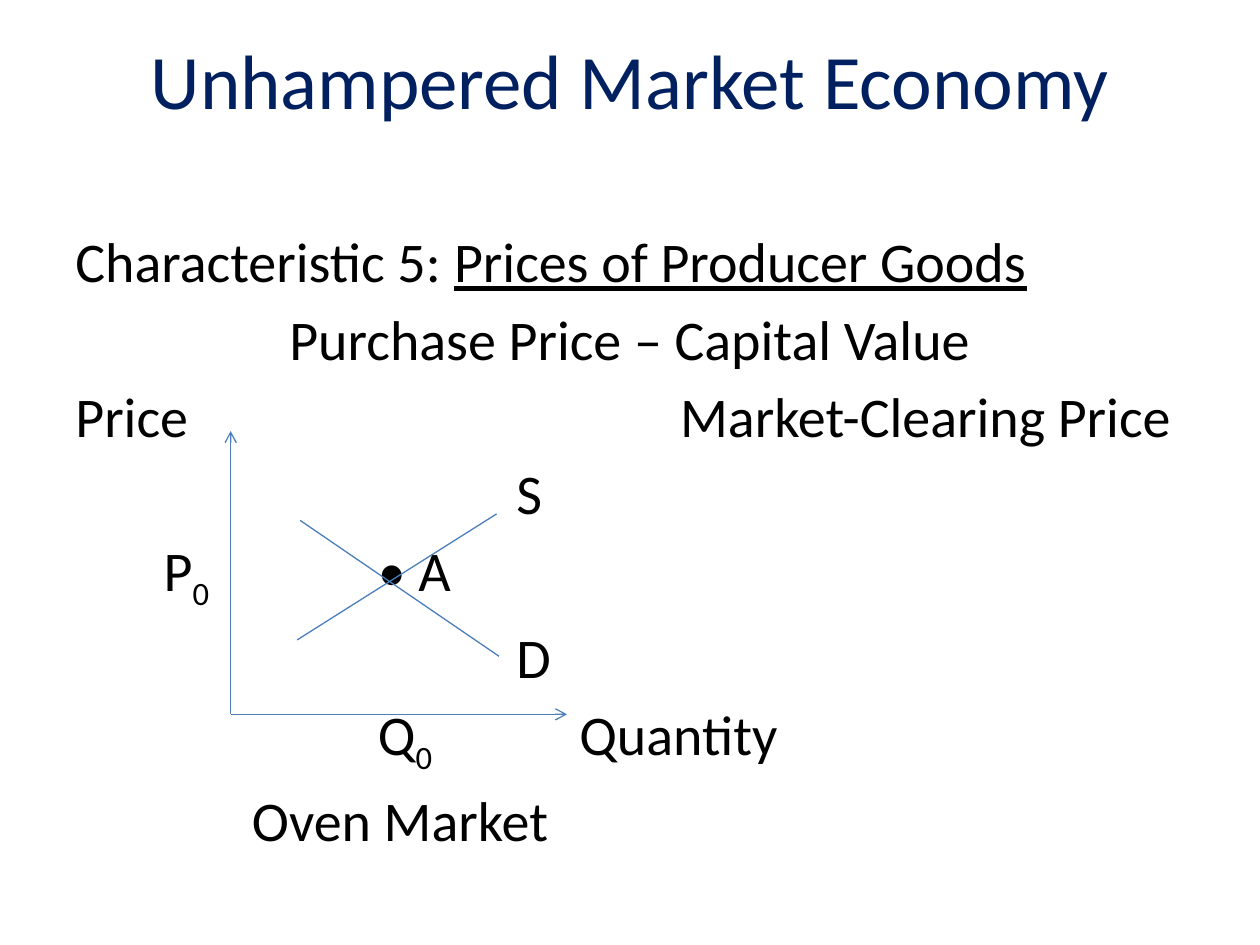
from dataclasses import dataclass

from lxml import etree
from pptx import Presentation
from pptx import util as u
from pptx.dml.color import RGBColor
from pptx.enum import shapes, text
from pptx.oxml.ns import qn

COLORS = {"title": "002060", "body": "000000", "line": "4B7EBC"}
FONT = "Calibri"
ORIGIN = (4.65, 14.4)


@dataclass
class Piece:
    words: str
    underline: bool = False
    subscript: bool = False


@dataclass
class Row:
    pieces: list[Piece]
    tabs: tuple[float, ...] = ()
    centered: bool = False


@dataclass
class Line:
    start: tuple[float, float]
    end: tuple[float, float]
    arrow: bool = False


ROWS = [
    Row([Piece("Characteristic 5: "), Piece("Prices of Producer Goods", underline=True)]),
    Row([Piece("Purchase Price – Capital Value")], centered=True),
    Row([Piece("Price\tMarket-Clearing Price")], (12.19,)),
    Row([Piece("\tS")], (8.89,)),
    Row([Piece("\tP"), Piece("0", subscript=True), Piece("\t• A")], (1.78, 6.1)),
    Row([Piece("\tD")], (8.89,)),
    Row([Piece("\tQ"), Piece("0", subscript=True), Piece("\tQuantity")], (6.1, 10.16)),
    Row([Piece("\tOven Market")], (3.56,)),
]

LINES = [
    Line(ORIGIN, (4.65, 8.69), arrow=True),
    Line(ORIGIN, (11.43, 14.4), arrow=True),
    Line((6.05, 10.49), (10.06, 13.23)),
    Line((5.99, 12.9), (10.01, 10.36)),
]


def add_text(slide, box: tuple[float, ...], rows: list[Row], size: float,
             color: str, anchor) -> None:
    frame = slide.shapes.add_textbox(*map(u.Cm, box)).text_frame
    frame.word_wrap = True
    frame.vertical_anchor = anchor
    for index, row in enumerate(rows):
        paragraph = frame.add_paragraph() if index else frame.paragraphs[0]
        if index:
            paragraph.space_before = u.Pt(5.7)
        paragraph.alignment = text.PP_ALIGN.CENTER if row.centered else text.PP_ALIGN.LEFT
        if row.tabs:
            properties = paragraph._p.get_or_add_pPr()
            tab_list = etree.SubElement(properties, qn("a:tabLst"))
            for position in row.tabs:
                etree.SubElement(tab_list, qn("a:tab"), pos=str(u.Cm(position)), algn="l")
        paragraph.font.name = FONT
        paragraph.font.size = u.Pt(size)
        paragraph.font.color.rgb = RGBColor.from_string(COLORS[color])
        for piece in row.pieces:
            run = paragraph.add_run()
            run.text = piece.words
            if piece.underline:
                run.font.underline = True
            if piece.subscript:
                run._r.get_or_add_rPr().set("baseline", "-25000")


def add_line(slide, line: Line) -> None:
    connector = slide.shapes.add_connector(
        shapes.MSO_CONNECTOR.STRAIGHT, *map(u.Cm, line.start + line.end))
    connector.line.width = u.Pt(0.75)
    connector.line.color.rgb = RGBColor.from_string(COLORS["line"])
    if line.arrow:
        etree.SubElement(connector.line._get_or_add_ln(), qn("a:tailEnd"), type="arrow")
    etree.SubElement(connector._element.spPr, qn("a:effectLst"))


def main() -> None:
    presentation = Presentation()
    presentation.slide_width = u.Cm(25.4)
    presentation.slide_height = u.Cm(19.05)
    slide = presentation.slides.add_slide(presentation.slide_layouts[6])
    title = Row([Piece("Unhampered Market Economy")], centered=True)
    add_text(slide, (0, 0, 25.4, 3.18), [title], 44, "title", text.MSO_ANCHOR.MIDDLE)
    add_text(slide, (1.27, 4.45, 22.86, 14.6), ROWS, 32, "body", text.MSO_ANCHOR.TOP)
    for line in LINES:
        add_line(slide, line)
    presentation.save("out.pptx")


if __name__ == "__main__":
    main()
